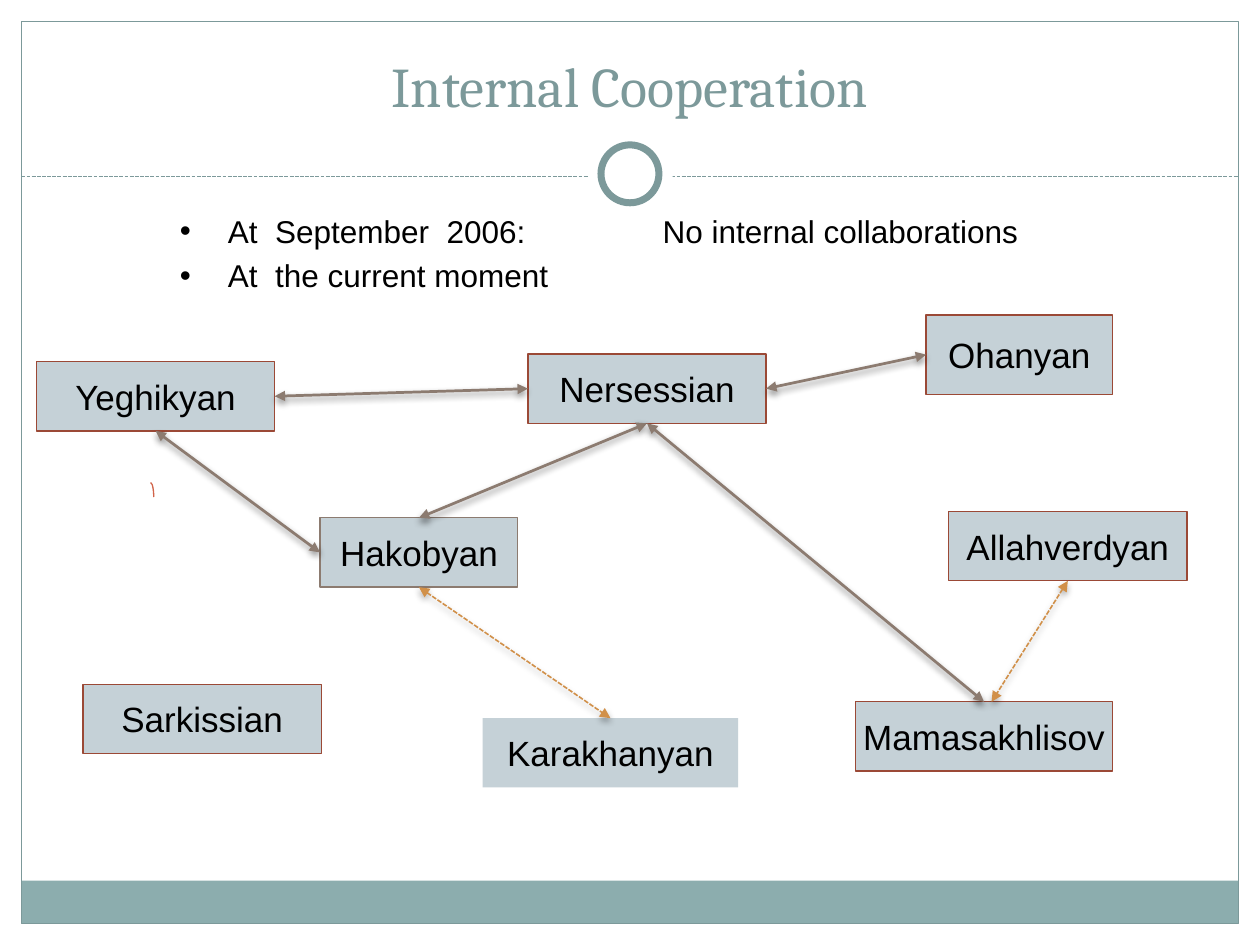
from lxml import etree
from pptx import Presentation
from pptx import util as u
from pptx.dml.color import RGBColor
from pptx.enum import dml, shapes, text
from pptx.oxml import ns

PX = 9144
COLORS = {
    "teal": "7C999A", "band": "8CADAE", "white": "FFFFFF", "black": "000000",
    "box": "C5D1D7", "red": "9B4936", "brown": "8C7B70", "orange": "D19049", "arc": "D16349",
}
TOP, LEFT, BOTTOM, RIGHT = range(4)
PEOPLE = {
    "Hakobyan": ((254, 411, 157, 55), "brown"),
    "Ohanyan": ((735, 250, 148, 63), "red"),
    "Nersessian": ((419, 281, 189, 55), "red"),
    "Karakhanyan": ((383, 570, 203, 55), None),
    "Yeghikyan": ((29, 287, 189, 55), "red"),
    "Sarkissian": ((66, 543, 189, 55), "red"),
    "Allahverdyan": ((753, 406, 189, 55), "red"),
    "Mamasakhlisov": ((679, 557, 204, 55), "red"),
}
STRONG_LINKS = [
    ("Nersessian", RIGHT, "Ohanyan", LEFT),
    ("Nersessian", BOTTOM, "Hakobyan", TOP),
    ("Yeghikyan", RIGHT, "Nersessian", LEFT),
    ("Yeghikyan", BOTTOM, "Hakobyan", LEFT),
    ("Nersessian", BOTTOM, "Mamasakhlisov", TOP),
]


def color(name):
    """Return the named colour."""
    return RGBColor.from_string(COLORS[name])


def emu(*lengths):
    """Turn px lengths into EMU."""
    return [u.Emu(length * PX) for length in lengths]


def add_xml(parent, tag, **attributes):
    """Append a DrawingML element and return it."""
    return etree.SubElement(parent, ns.qn(tag), attributes)


def add_span(para, words, size, font, tint):
    """Add one formatted run to a paragraph."""
    span = para.add_run()
    span.text = words
    span.font.size = u.Pt(size)
    span.font.name = font
    span.font.color.rgb = color(tint)


def add_figure(page, kind, box, fill=None, line=None, width=0.75):
    """Add a preset shape without a shadow."""
    figure = page.shapes.add_shape(kind, *emu(*box))
    figure.shadow.inherit = False
    if fill:
        figure.fill.solid()
        figure.fill.fore_color.rgb = color(fill)
    else:
        figure.fill.background()
    if line:
        figure.line.color.rgb = color(line)
        figure.line.width = u.Pt(width)
    else:
        figure.line.fill.background()
    return figure


def add_line(page, start, end, tint, width, dashed=False):
    """Add a straight line without a shadow and return it with its effect list."""
    line = page.shapes.add_connector(shapes.MSO_CONNECTOR.STRAIGHT, *emu(*start, *end))
    line.line.color.rgb = color(tint)
    line.line.width = u.Pt(width)
    if dashed:
        line.line.dash_style = dml.MSO_LINE.SQUARE_DOT
    return line, add_xml(line._element.spPr, "a:effectLst")


def add_frame(page, box):
    """Draw the border, bottom band, dashed rule and ring."""
    left, top, width, height = box
    kinds = shapes.MSO_SHAPE
    add_figure(page, kinds.RECTANGLE, (left, top + height - 34, width, 34), "band")
    add_figure(page, kinds.RECTANGLE, box, line="teal")
    rule, middle = top + 123, left + width // 2
    add_line(page, (left, rule), (left + width, rule), "teal", 0.75, True)
    for size, line in ((67, None), (46, "teal")):
        ring = (middle - size // 2, rule - 2 - size // 2, size, size)
        add_figure(page, kinds.OVAL, ring, "white", line, 4)


def add_title(page, box, words):
    """Place and format the title."""
    title = page.shapes.title
    title.left, title.top, title.width, title.height = emu(*box)
    frame = title.text_frame
    frame.vertical_anchor = text.MSO_ANCHOR.BOTTOM
    para = frame.paragraphs[0]
    para.alignment = text.PP_ALIGN.CENTER
    add_span(para, words, 32, "Cambria", "teal")


def add_bullets(page, box, lines, tab):
    """Add a bulleted list with one tab stop."""
    frame = page.shapes.add_textbox(*emu(*box)).text_frame
    frame.word_wrap = True
    for index, words in enumerate(lines):
        para = frame.add_paragraph() if index else frame.paragraphs[0]
        para.space_before = u.Pt(4)
        props = para._p.get_or_add_pPr()
        props.set("marL", str(38 * PX))
        props.set("indent", str(-38 * PX))
        add_xml(props, "a:buFont", typeface="Arial")
        add_xml(props, "a:buChar", char="•")
        add_xml(add_xml(props, "a:tabLst"), "a:tab", pos=str(tab * PX), algn="l")
        add_span(para, words, 18, "Arial", "black")


def add_person(page, box, name, line):
    """Add one name box."""
    person = add_figure(page, shapes.MSO_SHAPE.RECTANGLE, box, "box", line)
    frame = person.text_frame
    frame.word_wrap = False
    frame.vertical_anchor = text.MSO_ANCHOR.MIDDLE
    para = frame.paragraphs[0]
    para.alignment = text.PP_ALIGN.CENTER
    add_span(para, name, 20, "Arial", "black")
    return person


def add_link(page, begin, end, dashed=False, free_end=None):
    """Add a double arrow between box sides, or to a free point."""
    tint, width, alpha = ("orange", 0.9, 35) if dashed else ("brown", 1.57, 45)
    link, effects = add_line(page, (0, 0), free_end or (0, 0), tint, width, dashed)
    link.begin_connect(*begin)
    if end:
        link.end_connect(*end)
    for tag in ("a:headEnd", "a:tailEnd"):
        add_xml(link.line._get_or_add_ln(), tag, type="triangle")
    shadow = add_xml(effects, "a:outerShdw", blurRad=str(u.Pt(4)), dist=str(u.Pt(2)),
                     dir="5400000", rotWithShape="0")
    shade = add_xml(shadow, "a:srgbClr", val=COLORS["black"])
    add_xml(shade, "a:alpha", val=str(alpha * 1000))


def add_network(page):
    """Draw the people and the links between them."""
    people = {name: add_person(page, box, name, line) for name, (box, line) in PEOPLE.items()}
    for first, first_side, second, second_side in STRONG_LINKS:
        add_link(page, (people[first], first_side), (people[second], second_side))
    add_link(page, (people["Hakobyan"], BOTTOM), (people["Karakhanyan"], TOP), True)
    add_link(page, (people["Allahverdyan"], BOTTOM), None, True, (787, 557))
    add_figure(page, shapes.MSO_SHAPE.ARC, (117, 383, 5, 23), line="arc")


def main():
    """Build the deck."""
    deck = Presentation()
    deck.slide_width, deck.slide_height = emu(1000, 750)
    page = deck.slides.add_slide(deck.slide_layouts[5])
    add_frame(page, (17, 17, 966, 716))
    add_title(page, (50, 30, 900, 69), "Internal Cooperation")
    add_bullets(page, (133, 163, 709, 95),
                ["At  September  2006:\tNo internal collaborations", "At  the current moment"], 383)
    add_network(page)
    deck.save("out.pptx")


if __name__ == "__main__":
    main()
